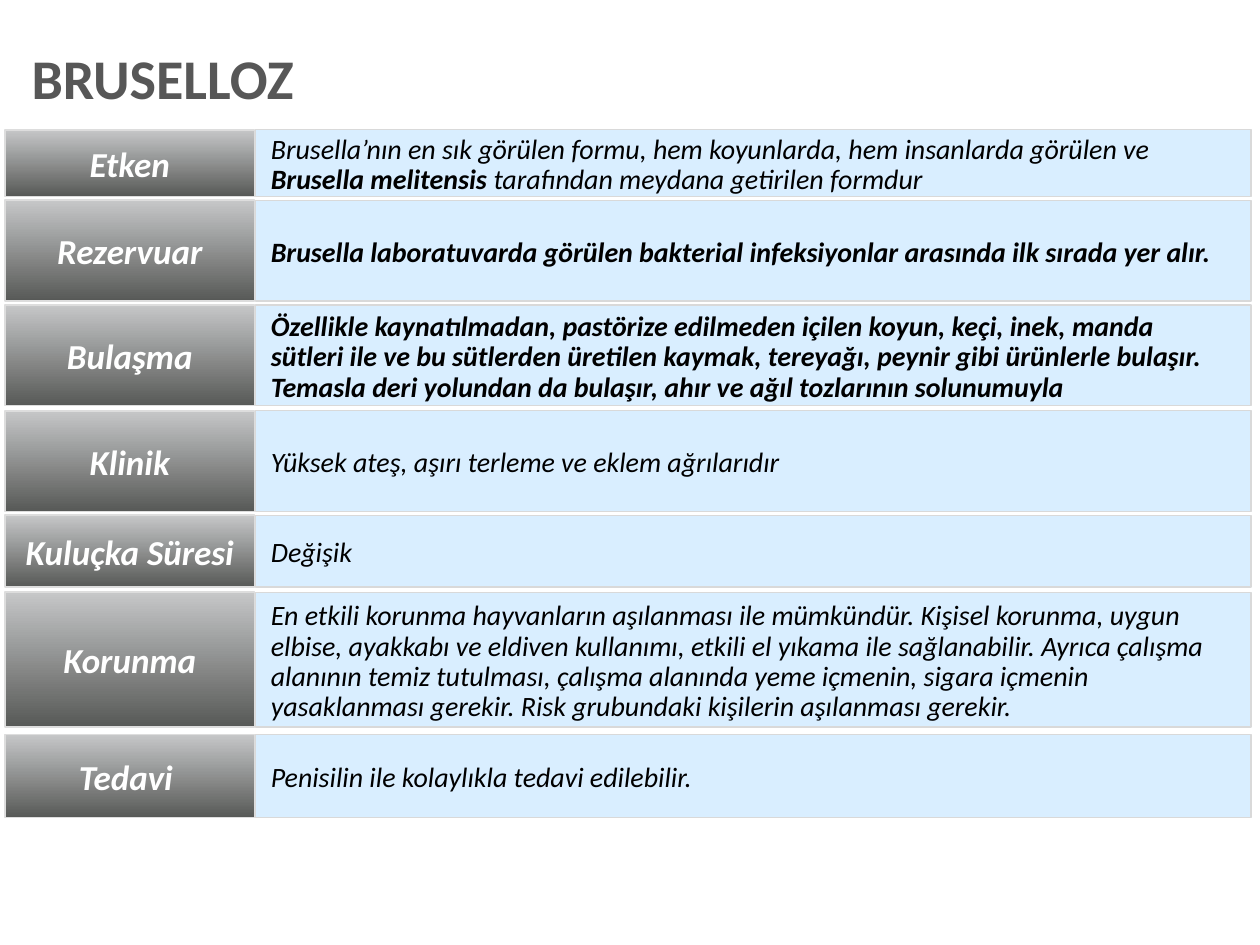
from pptx import Presentation
from pptx.dml.color import RGBColor
from pptx.enum.shapes import MSO_SHAPE as Shape
from pptx.enum.text import MSO_ANCHOR as Anchor, PP_ALIGN as Align
from pptx.oxml.ns import qn
from pptx.util import Inches, Pt
from lxml.etree import SubElement

WIDE, HIGH = 10, 7.5
LEFT, LABEL, SPLIT, BODY = 0.04, 1.98, 2.03, 7.9

ROWS = [
    (1.03, 0.53, "Etken", [
        ("Brusella’nın en sık görülen formu, hem koyunlarda, hem insanlarda görülen ve ", False),
        ("Brusella melitensis ", True),
        ("tarafından meydana getirilen formdur", False)]),
    (1.59, 0.8, "Rezervuar", [
        ("Brusella laboratuvarda görülen bakterial infeksiyonlar arasında ilk sırada yer alır.", True)]),
    (2.42, 0.8, "Bulaşma", [
        ("Özellikle kaynatılmadan, pastörize edilmeden içilen koyun, keçi, inek, manda "
         "sütleri ile ve bu sütlerden üretilen kaymak, tereyağı, peynir gibi ürünlerle bulaşır. "
         "Temasla deri yolundan da bulaşır, ahır ve ağıl tozlarının solunumuyla", True)]),
    (3.26, 0.8, "Klinik", [
        ("Yüksek ateş, aşırı terleme ve eklem ağrılarıdır", False)]),
    (4.09, 0.57, "Kuluçka Süresi", [("Değişik", False)]),
    (4.7, 1.07, "Korunma", [
        ("En etkili korunma hayvanların aşılanması ile mümkündür. Kişisel korunma, uygun "
         "elbise, ayakkabı ve eldiven kullanımı, etkili el yıkama ile sağlanabilir. Ayrıca çalışma "
         "alanının temiz tutulması, çalışma alanında yeme içmenin, sigara içmenin "
         "yasaklanması gerekir. Risk grubundaki kişilerin aşılanması gerekir.", False)]),
    (5.83, 0.66, "Tedavi ", [
        ("Penisilin ile kolaylıkla tedavi edilebilir.", False)]),
]


def color(code):
    return RGBColor.from_string(code)


def assign(item, values):
    for name, value in values.items():
        setattr(item, name, value)


def place(item, box):
    names = ("left", "top", "width", "height")
    assign(item, dict(zip(names, map(Inches, box))))


def write(item, runs, pads, **style):
    frame = item.text_frame
    names = ("margin_left", "margin_top", "margin_right", "margin_bottom")
    assign(frame, dict(zip(names, map(Inches, pads))))
    assign(frame, {"word_wrap": True, "vertical_anchor": Anchor.MIDDLE})
    para = frame.paragraphs[0]
    assign(para, style)
    for text, code, look in runs:
        run = para.add_run()
        run.text = text
        assign(run.font, {"name": "Calibri", **look})
        run.font.color.rgb = color(code)


def panel(slide, box, edge, width):
    item = slide.shapes.add_shape(Shape.RECTANGLE, *map(Inches, box))
    item.shadow.inherit = False
    item.line.color.rgb = color(edge)
    item.line.width = Pt(width)
    return item


def label(slide, box, text):
    item = panel(slide, box, "DDDDDD", 1)
    item.fill.gradient()
    item.fill.gradient_angle = 270
    for stop, code in zip(item.fill.gradient_stops, ("C6C7C8", "575957")):
        stop.color.rgb = color(code)
    look = {"size": Pt(20), "bold": True, "italic": True}
    write(item, [(text, "FFFFFF", look)], (0, 0, 0, 0), alignment=Align.CENTER)


def detail(slide, box, parts):
    item = panel(slide, box, "D9D9D9", 0.75)
    item.fill.solid()
    item.fill.fore_color.rgb = color("BDE1FF")
    tint = item.fill._xPr.find(qn("a:solidFill"))[0]
    SubElement(tint, qn("a:alpha")).set("val", "56000")
    runs = [(text, "000000", {"size": Pt(16), "bold": bold, "italic": True})
            for text, bold in parts]
    write(item, runs, (0.12, 0.12, 0.16, 0.08),
          alignment=Align.LEFT, line_spacing=0.9)


def title(slide, box, text):
    item = slide.shapes.title
    place(item, box)
    write(item, [(text, "575757", {"size": Pt(32), "bold": True})],
          (0, 0.05, 0, 0.05), alignment=Align.LEFT, line_spacing=0.9)


def main():
    deck = Presentation()
    assign(deck, {"slide_width": Inches(WIDE), "slide_height": Inches(HIGH)})
    slide = deck.slides.add_slide(deck.slide_layouts[5])
    title(slide, (0.25, 0.29, 9.64, 0.71), "BRUSELLOZ")
    for top, height, name, parts in ROWS:
        label(slide, (LEFT, top, LABEL, height), name)
        detail(slide, (SPLIT, top, BODY, height), parts)
    deck.save("out.pptx")


if __name__ == "__main__":
    main()
